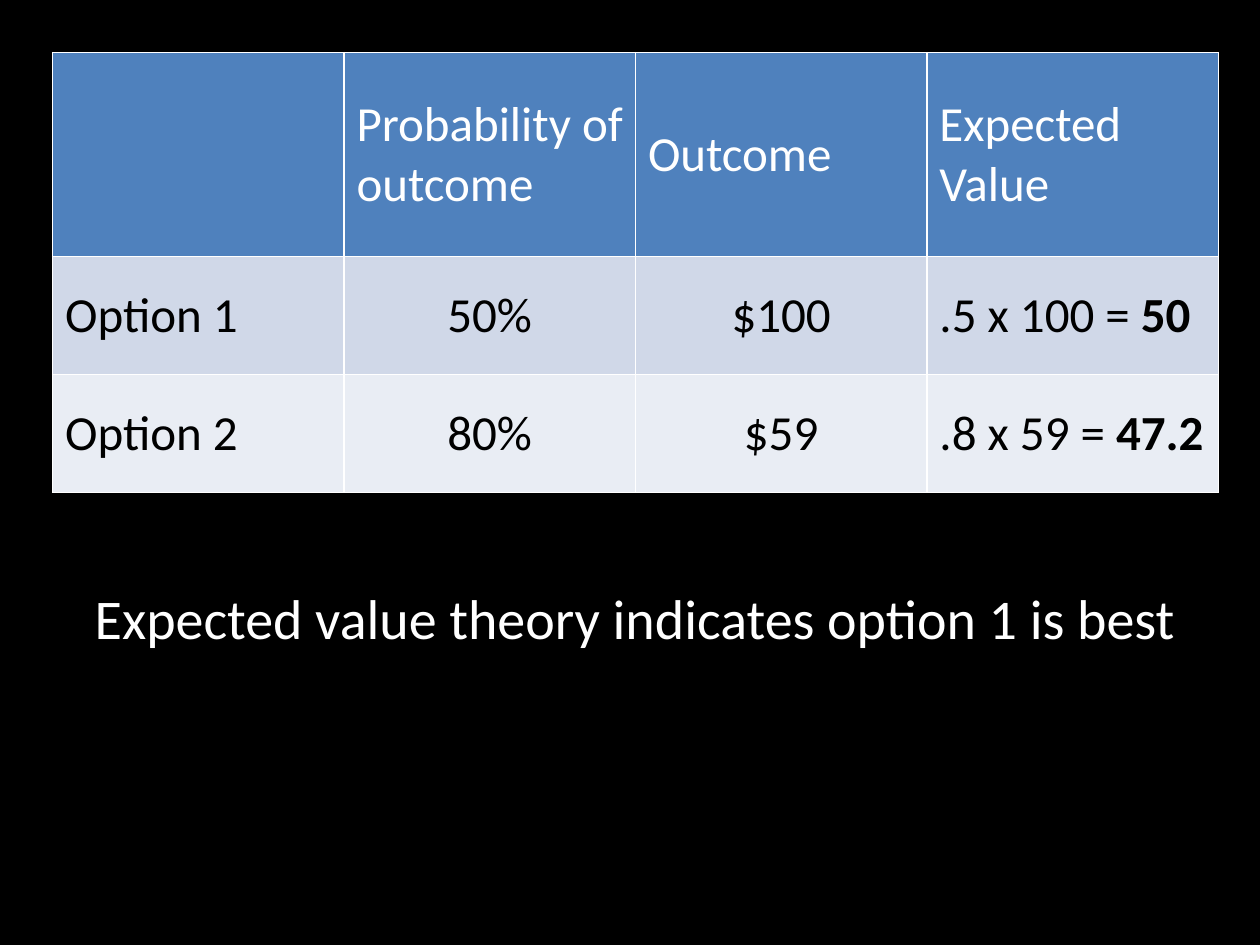
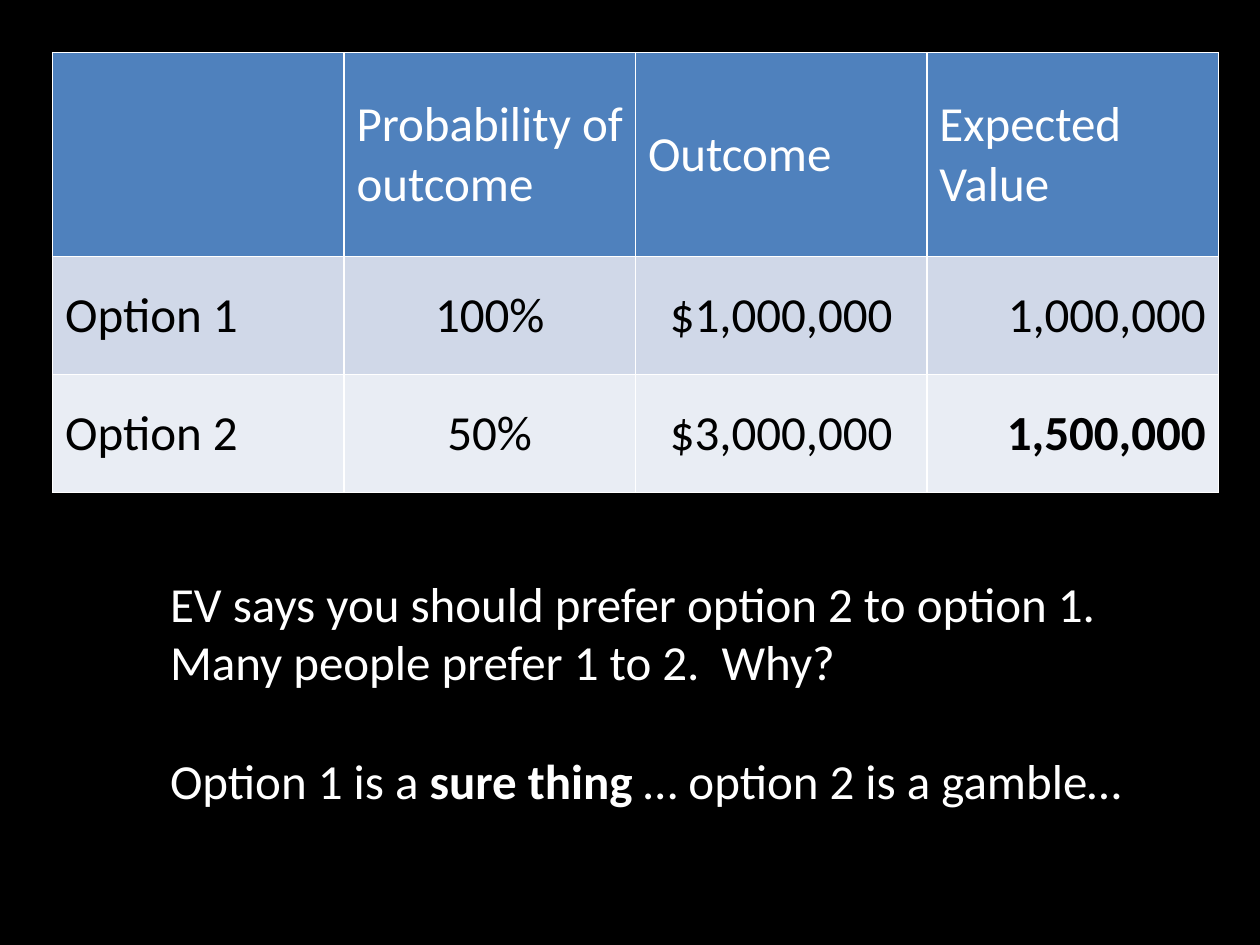
"""Build two slides that compare options by expected value."""
from lxml.etree import SubElement
from pptx import Presentation
from pptx.dml.color import RGBColor
from pptx.enum.text import MSO_ANCHOR, PP_ALIGN
from pptx.oxml.ns import qn
from pptx.util import Cm, Pt

FONT = "Calibri"
BLACK = RGBColor(0x00, 0x00, 0x00)
WHITE = RGBColor(0xFF, 0xFF, 0xFF)
HEADER_BLUE = RGBColor(0x4F, 0x81, 0xBD)
ROW_FILLS = [RGBColor(0xD0, 0xD8, 0xE8), RGBColor(0xE9, 0xED, 0xF4)]
LEFT, CENTER, RIGHT = PP_ALIGN.LEFT, PP_ALIGN.CENTER, PP_ALIGN.RIGHT

TABLE_LEFT, TABLE_TOP, TABLE_WIDTH = Cm(1.06), Cm(1.06), Cm(23.5)
ROW_HEIGHTS = [Cm(4.11), Cm(2.38), Cm(2.38)]
TABLE_SIZE = 28
BORDER = Pt(1)

HEADERS = ["", "Probability of outcome", "Outcome", "Expected Value"]

# Text is a list of (words, bold) spans; a paragraph adds the space before it.
SLIDES = [
    {
        "rows": [
            ["Option 1", "50%", "$100", [(".5 x 100 = ", False), ("50", True)]],
            ["Option 2", "80%", "$59", [(".8 x 59 = ", False), ("47.2", True)]],
        ],
        "value_align": LEFT,
        "box": (Cm(1.06), Cm(11.63), Cm(23.5), Cm(1.63)),
        "size": 32,
        "align": CENTER,
        "paragraphs": [("Expected value theory indicates option 1 is best", 0)],
    },
    {
        "rows": [
            ["Option 1", "100%", "$1,000,000", "1,000,000"],
            ["Option 2", "50%", "$3,000,000", [("1,500,000", True)]],
        ],
        "value_align": RIGHT,
        "box": (Cm(3.18), Cm(11.43), Cm(19.89), Cm(7.01)),
        "size": 28,
        "align": LEFT,
        "paragraphs": [
            ("EV says you should prefer option 2 to option 1.", 0),
            ("Many people prefer 1 to 2.  Why?", 0),
            ([("Option 1 is a ", False), ("sure thing ", True),
              ("… option 2 is a gamble…", False)], 34),
        ],
    },
]


def write(para, text, size, color, align):
    """Fill a paragraph with plain words or with (words, bold) spans."""
    para.alignment = align
    spans = [(text, False)] if isinstance(text, str) else text
    for words, bold in spans:
        if words:
            span = para.add_run()
            span.text = words
            span.font.name = FONT
            span.font.size = Pt(size)
            span.font.bold = bold
            span.font.color.rgb = color


def add_borders(cell):
    """Draw a white line on each side of a cell."""
    properties = cell._tc.get_or_add_tcPr()
    for side in ("a:lnL", "a:lnR", "a:lnT", "a:lnB"):
        line = SubElement(properties, qn(side), w=str(BORDER))
        fill = SubElement(line, qn("a:solidFill"))
        SubElement(fill, qn("a:srgbClr"), val=str(WHITE))


def add_option_table(page, rows, value_align):
    """Add the table of options under the shared header row."""
    grid = [HEADERS] + rows
    frame = page.shapes.add_table(len(grid), len(HEADERS), TABLE_LEFT, TABLE_TOP,
                                  TABLE_WIDTH, sum(ROW_HEIGHTS))
    table = frame.table
    body_aligns = [LEFT, CENTER, CENTER, value_align]
    for row_index, texts in enumerate(grid):
        table.rows[row_index].height = ROW_HEIGHTS[row_index]
        is_header = row_index == 0
        fill = HEADER_BLUE if is_header else ROW_FILLS[row_index - 1]
        color = WHITE if is_header else BLACK
        for column, text in enumerate(texts):
            cell = table.cell(row_index, column)
            cell.vertical_anchor = MSO_ANCHOR.MIDDLE
            add_borders(cell)
            cell.fill.solid()
            cell.fill.fore_color.rgb = fill
            align = LEFT if is_header else body_aligns[column]
            write(cell.text_frame.paragraphs[0], text, TABLE_SIZE, color, align)


def add_conclusion(page, content):
    """Add the white text below the table."""
    frame = page.shapes.add_textbox(*content["box"]).text_frame
    frame.word_wrap = True
    for index, (text, space) in enumerate(content["paragraphs"]):
        para = frame.add_paragraph() if index else frame.paragraphs[0]
        para.space_before = Pt(space)
        write(para, text, content["size"], WHITE, content["align"])


def main():
    """Create the deck and save it."""
    deck = Presentation()
    deck.slide_width, deck.slide_height = Cm(25.4), Cm(19.05)
    background = deck.slide_master.background.fill
    background.solid()
    background.fore_color.rgb = BLACK
    blank = deck.slide_layouts.get_by_name("Blank")
    for content in SLIDES:
        page = deck.slides.add_slide(blank)
        add_option_table(page, content["rows"], content["value_align"])
        add_conclusion(page, content)
    deck.save("out.pptx")


if __name__ == "__main__":
    main()
